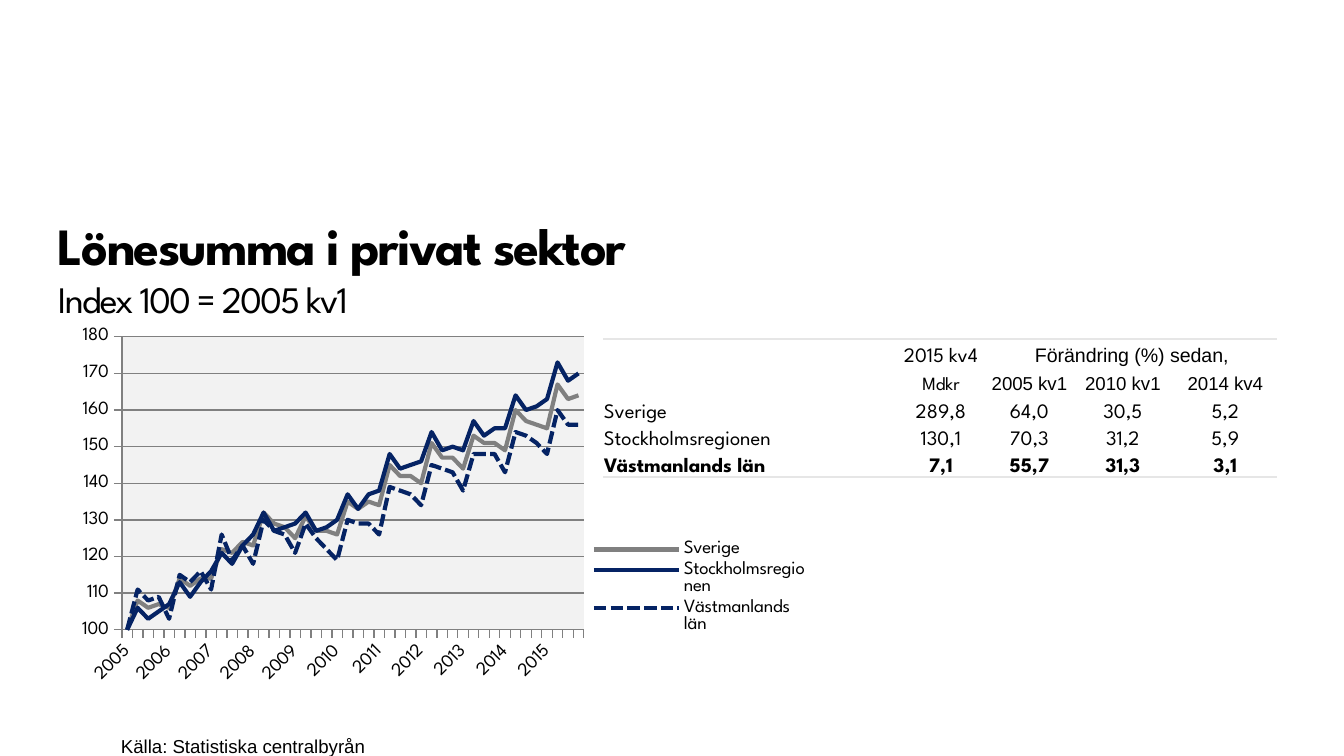
"""Build a slide on private sector payrolls with a line chart and a table."""
from pptx import Presentation
from pptx.chart.data import CategoryChartData
from pptx.dml.color import RGBColor
from pptx.enum.chart import XL_CHART_TYPE, XL_LEGEND_POSITION, XL_TICK_MARK
from pptx.enum.dml import MSO_LINE
from pptx.enum.text import MSO_ANCHOR, MSO_AUTO_SIZE, PP_ALIGN
from pptx.oxml import parse_xml
from pptx.oxml.ns import nsdecls
from pptx.util import Pt

LINE = XL_CHART_TYPE.LINE
RIGHT = XL_LEGEND_POSITION.RIGHT
OUT, NONE = XL_TICK_MARK.OUTSIDE, XL_TICK_MARK.NONE
DASH = MSO_LINE.SQUARE_DOT
BOTTOM = MSO_ANCHOR.BOTTOM
FIXED = MSO_AUTO_SIZE.NONE
LEFT, CENTER = PP_ALIGN.LEFT, PP_ALIGN.CENTER
PX = 6804
SPARTAN, ARIAL = "League Spartan", "Arial"
PLAIN = "{2D5ABB26-0587-4C30-8999-92F81FD0307C}"
COLORS = {"text": "000000", "gray": "808080", "navy": "052364",
          "plot": "F2F2F2", "rule": "E6E6E6"}


def style(font, size, name, bold=False):
    font.size, font.name, font.bold = Pt(size), name, bold
    font.color.rgb = RGBColor.from_string(COLORS["text"])


def place(owner, index, x, y, w, h, inner=""):
    for old in owner.findall("./{*}layout"):
        owner.remove(old)
    owner.insert(index, parse_xml(
        f'<c:layout {nsdecls("c")}><c:manualLayout>{inner}'
        '<c:xMode val="edge"/><c:yMode val="edge"/>'
        f'<c:x val="{x}"/><c:y val="{y}"/><c:w val="{w}"/><c:h val="{h}"/>'
        '</c:manualLayout></c:layout>'))


prs = Presentation()
prs.slide_width, prs.slide_height = 1344 * PX, 756 * PX
slide = prs.slides.add_slide(prs.slide_layouts[5])

title = slide.shapes.title
title.left, title.top, title.width, title.height = 58 * PX, 214 * PX, 913 * PX, 107 * PX
frame = title.text_frame
frame.text = "Lönesumma i privat sektor\vIndex 100 = 2005 kv1"
frame.auto_size = FIXED
frame.vertical_anchor = BOTTOM
frame.margin_left = frame.margin_top = frame.margin_right = frame.margin_bottom = 0
para = frame.paragraphs[0]
para.alignment = LEFT
for run, size, bold in zip(para.runs, (28, 20), (True, False)):
    style(run.font, size, SPARTAN, bold)
    run._r.get_or_add_rPr().set("spc", "-90")

rows = [
    ["", "2015 kv4", "Förändring (%) sedan,", "", ""],
    ["", "Mdkr", "2005 kv1", "2010 kv1", "2014 kv4"],
    ["Sverige", "289,8", "64,0", "30,5", "5,2"],
    ["Stockholmsregionen", "130,1", "70,3", "31,2", "5,9"],
    ["Västmanlands län", "7,1", "55,7", "31,3", "3,1"],
]
fonts = {(0, 2): (10.5, ARIAL), (1, 1): (10, SPARTAN)}
fonts.update({(1, col): (10, ARIAL) for col in (2, 3, 4)})
table = slide.shapes.add_table(5, 5, 603 * PX, 339 * PX, 674 * PX, 138 * PX).table
table.first_row = table.horz_banding = False
table._tbl.find(".//{*}tableStyleId").text = PLAIN
for col, width in zip(table.columns, (292, 92, 85, 102, 103)):
    col.width = width * PX
for row, height in zip(table.rows, (28, 28, 28, 27, 27)):
    row.height = height * PX
table.cell(0, 2).merge(table.cell(0, 4))
for r, row in enumerate(rows):
    for c, text in enumerate(row):
        cell = table.cell(r, c)
        cell.fill.background()
        cell.margin_left = cell.margin_right = cell.margin_top = PX
        cell.margin_bottom = 0
        cell.vertical_anchor = BOTTOM
        para = cell.text_frame.paragraphs[0]
        para.alignment = CENTER if c else LEFT
        if text:
            para.text = text
            style(para.runs[0].font, *fonts.get((r, c), (11, SPARTAN)), r == 4)
        else:
            para._p.append(parse_xml(f'<a:endParaRPr {nsdecls("a")} sz="1000"/>'))
        if r in (0, 4):
            side = "lnB" if r else "lnT"
            cell._tc.get_or_add_tcPr().insert(0, parse_xml(
                f'<a:{side} {nsdecls("a")} w="12700"><a:solidFill>'
                f'<a:srgbClr val="{COLORS["rule"]}"/></a:solidFill></a:{side}>'))

box = slide.shapes.add_textbox(121 * PX, 712 * PX, 400 * PX, 44 * PX)
frame = box.text_frame
frame.word_wrap = True
frame.margin_left = frame.margin_top = frame.margin_right = frame.margin_bottom = 0
frame.text = "Källa: Statistiska centralbyrån"
para = frame.paragraphs[0]
para.alignment = LEFT
para.line_spacing = Pt(24)
style(para.runs[0].font, 10, ARIAL)

series = [
    ("Sverige", "gray", None, [
        100, 108, 106, 107, 106, 114, 112, 114, 114, 122, 121,
        124, 123, 132, 129, 128, 125, 131, 127, 127, 126, 135,
        133, 135, 134, 145, 142, 142, 140, 151, 147, 147, 144,
        153, 151, 151, 149, 160, 157, 156, 155, 167, 163, 164]),
    ("Stockholmsregionen", "navy", None, [
        100, 106, 103, 105, 107, 113, 109, 113, 116, 121, 118,
        123, 126, 132, 127, 128, 129, 132, 127, 128, 130, 137,
        133, 137, 138, 148, 144, 145, 146, 154, 149, 150, 149,
        157, 153, 155, 155, 164, 160, 161, 163, 173, 168, 170]),
    ("Västmanlands län", "navy", DASH, [
        100, 111, 108, 109, 103, 115, 113, 116, 111, 126, 119,
        123, 118, 130, 127, 126, 121, 129, 125, 122, 119, 130,
        129, 129, 126, 139, 138, 137, 134, 145, 144, 143, 138,
        148, 148, 148, 143, 154, 153, 151, 148, 160, 156, 156]),
]
data = CategoryChartData(number_format="0")
data.categories = ["" if i % 4 else str(2005 + i // 4) for i in range(44)]
for name, color, dash, vals in series:
    data.add_series(name, vals)
chart = slide.shapes.add_chart(LINE, 68 * PX, 322 * PX, 770 * PX, 371 * PX, data).chart
style(chart.font, 10, SPARTAN)
chart.has_title = False
chart.has_legend = True
legend = chart.legend
legend.position = RIGHT
legend.include_in_layout = False
place(legend._element, 1, 0.68, 0.58, 0.28, 0.27)

plot = chart.plots[0]
plot.vary_by_categories = False
for line, (name, color, dash, vals) in zip(plot.series, series):
    line.smooth = False
    line.format.line.width = Pt(2.25)
    line.format.line.color.rgb = RGBColor.from_string(COLORS[color])
    if dash:
        line.format.line.dash_style = dash

axis, cats = chart.value_axis, chart.category_axis
axis.minimum_scale, axis.maximum_scale, axis.major_unit = 100, 180, 10
axis.has_major_gridlines = True
axis.tick_labels.number_format = "0"
axis.tick_labels.number_format_is_linked = False
for item in (axis, cats):
    item.major_tick_mark, item.minor_tick_mark = OUT, NONE
    style(item.tick_labels.font, 10, SPARTAN)
for item in (axis, cats, axis.major_gridlines):
    item.format.line.width = Pt(0.75)
    item.format.line.color.rgb = RGBColor.from_string(COLORS["gray"])
cats._element.find(".//{*}bodyPr").set("rot", "-2700000")

area = chart._chartSpace.find(".//{*}plotArea")
place(area, 0, 0.07, 0.04, 0.6, 0.79, '<c:layoutTarget val="inner"/>')
area.append(parse_xml(
    f'<c:spPr {nsdecls("c", "a")}><a:solidFill>'
    f'<a:srgbClr val="{COLORS["plot"]}"/></a:solidFill></c:spPr>'))

prs.save("out.pptx")
